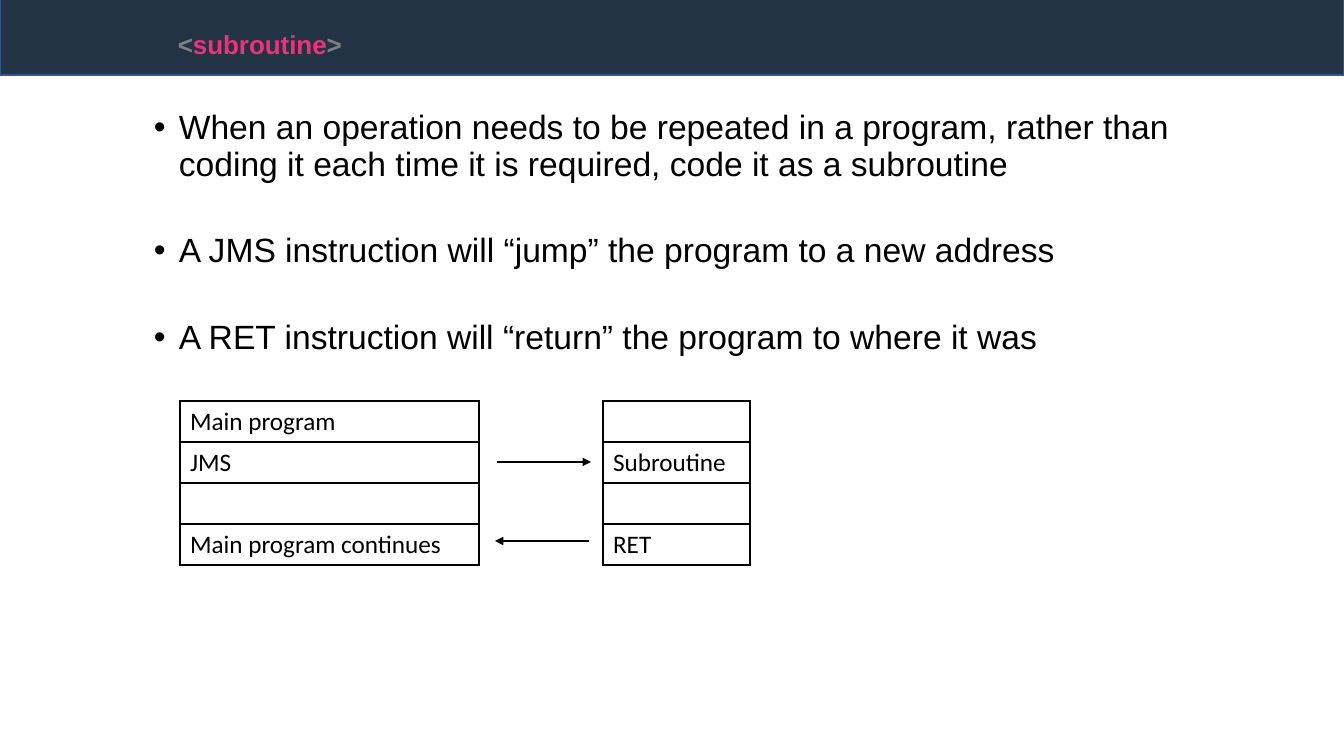
from dataclasses import dataclass

from lxml.etree import SubElement
from pptx import Presentation
from pptx.dml.color import RGBColor
from pptx.enum.shapes import MSO_CONNECTOR, MSO_SHAPE
from pptx.enum.text import MSO_ANCHOR, MSO_AUTO_SIZE
from pptx.oxml.ns import qn
from pptx.util import Pt

EMU_PER_PX = 914400 / 100.8


@dataclass(frozen=True)
class Theme:
    banner: str = "223346"
    banner_edge: str = "325491"
    bracket: str = "808080"
    keyword: str = "F1307C"
    ink: str = "000000"
    text_font: str = "Arial"
    table_font: str = "Calibri"
    title_size: int = 32
    body_size: int = 24
    table_size: int = 18
    point_gap: int = 36
    border: int = 1
    arrow: int = 2


THEME = Theme()

TITLE = [("<", THEME.bracket), ("subroutine", THEME.keyword), (">", THEME.bracket)]
POINTS = [
    "When an operation needs to be repeated in a program, rather than "
    "coding it each time it is required, code it as a subroutine",
    "A JMS instruction will “jump” the program to a new address",
    "A RET instruction will “return” the program to where it was",
]
MEMORY_ROWS = [
    ("Main program", ""),
    ("JMS", "Subroutine"),
    ("", ""),
    ("Main program continues", "RET"),
]
MEMORY_COLUMNS = [299, 124, 147]
ROW_HEIGHT = 41
GAP_COLUMN = 1


def px(*lengths):
    return [round(length * EMU_PER_PX) for length in lengths]


def apply(target, values):
    for name, value in values.items():
        setattr(target, name, value)


def style_font(font, name, size, color, bold=False):
    apply(font, {"name": name, "size": Pt(size), "bold": bold})
    font.color.rgb = RGBColor.from_string(color)


def add_banner(slide, *box):
    banner = slide.shapes.add_shape(MSO_SHAPE.RECTANGLE, *px(*box))
    banner.shadow.inherit = False
    banner.fill.solid()
    banner.fill.fore_color.rgb = RGBColor.from_string(THEME.banner)
    banner.line.color.rgb = RGBColor.from_string(THEME.banner_edge)
    banner.line.width = Pt(THEME.border)


def add_title(slide, parts, *box):
    title = slide.shapes.add_textbox(*px(*box)).text_frame
    apply(title, {"word_wrap": False, "auto_size": MSO_AUTO_SIZE.SHAPE_TO_FIT_TEXT})
    for text, color in parts:
        part = title.paragraphs[0].add_run()
        part.text = text
        style_font(part.font, THEME.text_font, THEME.title_size, color, bold=True)
        part._r.get_or_add_rPr().set("baseline", "30000")


def add_points(slide, points, *box):
    body = slide.shapes.add_textbox(*px(*box)).text_frame
    body.word_wrap = True
    margin, hang = px(76, -25)
    for index, text in enumerate(points):
        point = body.add_paragraph() if index else body.paragraphs[0]
        properties = point._p.get_or_add_pPr()
        properties.set("marL", str(margin))
        properties.set("indent", str(hang))
        SubElement(properties, qn("a:buFont")).set("typeface", THEME.text_font)
        SubElement(properties, qn("a:buChar")).set("char", "•")
        point.text = text
        apply(point, {"line_spacing": 0.9,
                      "space_before": Pt(THEME.point_gap if index else 0)})
        style_font(point.font, THEME.text_font, THEME.body_size, THEME.ink)


def set_borders(cell, visible):
    properties = cell._tc.get_or_add_tcPr()
    for side in "LRTB":
        edge = SubElement(properties, qn(f"a:ln{side}"), w=str(Pt(THEME.border)))
        if side in visible:
            paint = SubElement(edge, qn("a:solidFill"))
            SubElement(paint, qn("a:srgbClr")).set("val", THEME.ink)
        else:
            SubElement(edge, qn("a:noFill"))


def add_memory_table(slide, rows, left, top):
    box = px(left, top, sum(MEMORY_COLUMNS), ROW_HEIGHT * len(rows))
    table = slide.shapes.add_table(len(rows), len(MEMORY_COLUMNS), *box).table
    apply(table, {"first_row": False, "horz_banding": False})
    for column, width in zip(table.columns, px(*MEMORY_COLUMNS)):
        column.width = width
    for row, (main_text, routine_text) in zip(table.rows, rows):
        row.height = px(ROW_HEIGHT)[0]
        for index, text in enumerate((main_text, "", routine_text)):
            cell = row.cells[index]
            set_borders(cell, "LR" if index == GAP_COLUMN else "LRTB")
            cell.fill.background()
            cell.vertical_anchor = MSO_ANCHOR.TOP
            cell.text = text
            style_font(cell.text_frame.paragraphs[0].font,
                       THEME.table_font, THEME.table_size, THEME.ink)
    # The gap between the two programs is one tall cell
    table.cell(0, GAP_COLUMN).merge(table.cell(len(rows) - 1, GAP_COLUMN))


def add_arrow(slide, start, end, y):
    arrow = slide.shapes.add_connector(MSO_CONNECTOR.STRAIGHT, *px(start, y, end, y))
    arrow.line.color.rgb = RGBColor.from_string(THEME.ink)
    arrow.line.width = Pt(THEME.arrow)
    SubElement(arrow.line._get_or_add_ln(), qn("a:tailEnd")).set("type", "triangle")
    SubElement(arrow._element.spPr, qn("a:effectLst"))


def main():
    deck = Presentation()
    deck.slide_width, deck.slide_height = px(1344, 756)
    slide = deck.slides.add_slide(deck.slide_layouts[6])

    # Heading
    add_banner(slide, 0, -4, 1344, 79)

    # Explanation
    add_points(slide, POINTS, 93, 106, 1175, 581)
    add_title(slide, TITLE, 168, 18, 187, 65)

    # Main program and subroutine, with the jump and the return
    add_memory_table(slide, MEMORY_ROWS, 180, 401)
    add_arrow(slide, 497, 591, 462)
    add_arrow(slide, 589, 495, 541)

    deck.save("out.pptx")


if __name__ == "__main__":
    main()
